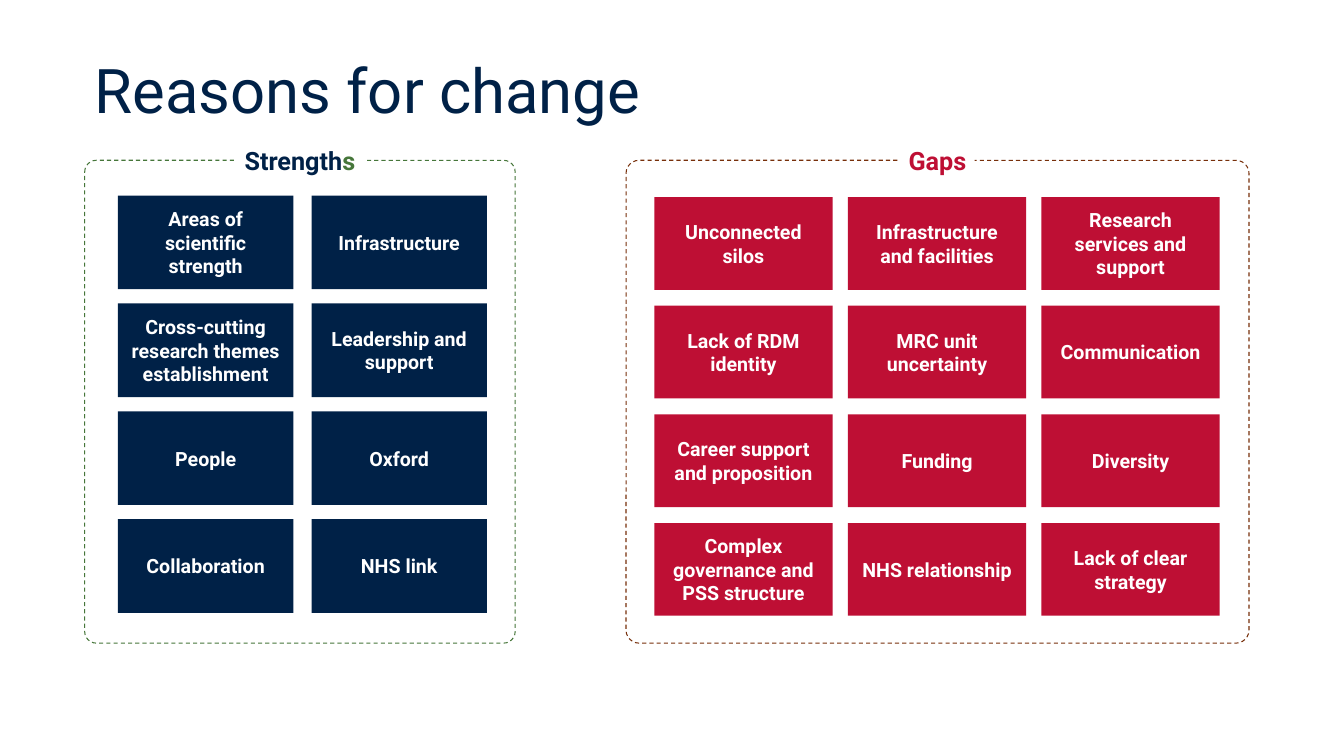
from dataclasses import dataclass

from pptx import Presentation
from pptx.dml.color import RGBColor
from pptx.enum.dml import MSO_LINE
from pptx.enum.shapes import MSO_SHAPE
from pptx.enum.text import MSO_ANCHOR, PP_ALIGN
from pptx.util import Inches, Pt

RECT, ROUND = MSO_SHAPE.RECTANGLE, MSO_SHAPE.ROUNDED_RECTANGLE
DASH = MSO_LINE.DASH
MIDDLE, TOP = MSO_ANCHOR.MIDDLE, MSO_ANCHOR.TOP
LEFT, CENTER = PP_ALIGN.LEFT, PP_ALIGN.CENTER
WIDE, HIGH = Inches(13.333), Inches(7.5)


@dataclass(frozen=True)
class Theme:
    font: str = "Roboto"
    navy: str = "002147"
    green: str = "46763A"
    red: str = "BE0F34"
    brown: str = "772F0A"
    white: str = "FFFFFF"
    title: int = 44
    label: int = 18
    card: int = 14


THEME = Theme()

# Lengths are percent of the slide: left/width of its width, top/height of its height.
FRAME = {"top": 21.2, "high": 63.87}
LABEL = {"top": 19.2, "high": 4}

STRENGTHS = {
    "frame": (6.3, 32.03), "edge": THEME.green, "fill": THEME.navy,
    "label": [("Strength", THEME.navy), ("s", THEME.green)], "span": 9.53,
    "start": (8.78, 25.87), "step": (14.4, 14.27), "size": (13.05, 12.4),
    "rows": [
        ["Areas of scientific strength", "Infrastructure"],
        ["Cross-cutting research themes establishment", "Leadership and support"],
        ["People", "Oxford"],
        ["Collaboration", "NHS link"],
    ],
}
GAPS = {
    "frame": (46.58, 46.35), "edge": THEME.brown, "fill": THEME.red,
    "label": [("Gaps", THEME.red)], "span": 5.55,
    "start": (48.68, 26.07), "step": (14.4, 14.37), "size": (13.28, 12.27),
    "rows": [
        ["Unconnected silos", "Infrastructure and facilities",
         "Research services and support"],
        ["Lack of RDM identity", "MRC unit uncertainty", "Communication"],
        ["Career support and proposition", "Funding", "Diversity"],
        ["Complex governance and PSS structure", "NHS relationship",
         "Lack of clear strategy"],
    ],
}


def place(left, top, wide, high):
    """Turn percent of the slide into lengths."""
    return (int(WIDE * left / 100), int(HIGH * top / 100),
            int(WIDE * wide / 100), int(HIGH * high / 100))


def apply(target, values):
    for name, value in values.items():
        setattr(target, name, value)


def write(shape, runs, size, bold=True, align=CENTER, **frame):
    """Fill a shape with one paragraph of (text, colour) runs."""
    apply(shape.text_frame, {"word_wrap": True, "vertical_anchor": MIDDLE, **frame})
    para = shape.text_frame.paragraphs[0]
    para.alignment = align
    for text, color in runs:
        run = para.add_run()
        run.text = text
        apply(run.font, {"name": THEME.font, "size": Pt(size), "bold": bold})
        run.font.color.rgb = RGBColor.from_string(color)
    return para


def add_title(slide, text):
    box = slide.shapes.add_textbox(*place(6.3, 6.27, 86.25, 12.27))
    para = write(box, [(text, THEME.navy)], THEME.title, bold=False, align=LEFT)
    para.line_spacing = 0.9


def add_block(slide, fill, *area):
    block = slide.shapes.add_shape(RECT, *place(*area))
    block.shadow.inherit = False
    block.fill.solid()
    block.fill.fore_color.rgb = RGBColor.from_string(fill)
    block.line.fill.background()
    return block


def add_frame(slide, left, wide, edge):
    frame = slide.shapes.add_shape(
        ROUND, *place(left, FRAME["top"], wide, FRAME["high"]))
    frame.adjustments[0] = 0.027
    frame.shadow.inherit = False
    frame.fill.background()
    frame.line.color.rgb = RGBColor.from_string(edge)
    apply(frame.line, {"width": Pt(0.75), "dash_style": DASH})


def add_label(slide, runs, mid, span):
    """Put a heading over the top edge of a frame, centred at mid."""
    label = add_block(slide, THEME.white,
                      mid - span / 2, LABEL["top"], span, LABEL["high"])
    write(label, runs, THEME.label, word_wrap=False, vertical_anchor=TOP,
          margin_left=Inches(0.08), margin_right=Inches(0.08),
          margin_top=0, margin_bottom=0)


def add_cards(slide, panel):
    (left, top), (across, down) = panel["start"], panel["step"]
    for row, texts in enumerate(panel["rows"]):
        for col, text in enumerate(texts):
            card = add_block(slide, panel["fill"], left + col * across,
                             top + row * down, *panel["size"])
            write(card, [(text, THEME.white)], THEME.card)


def add_panel(slide, panel):
    left, wide = panel["frame"]
    add_cards(slide, panel)
    add_frame(slide, left, wide, panel["edge"])
    add_label(slide, panel["label"], left + wide / 2, panel["span"])


def main():
    deck = Presentation()
    apply(deck, {"slide_width": WIDE, "slide_height": HIGH})
    slide = deck.slides.add_slide(deck.slide_layouts[6])
    add_title(slide, "Reasons for change")
    for panel in (STRENGTHS, GAPS):
        add_panel(slide, panel)
    deck.save("out.pptx")


if __name__ == "__main__":
    main()
